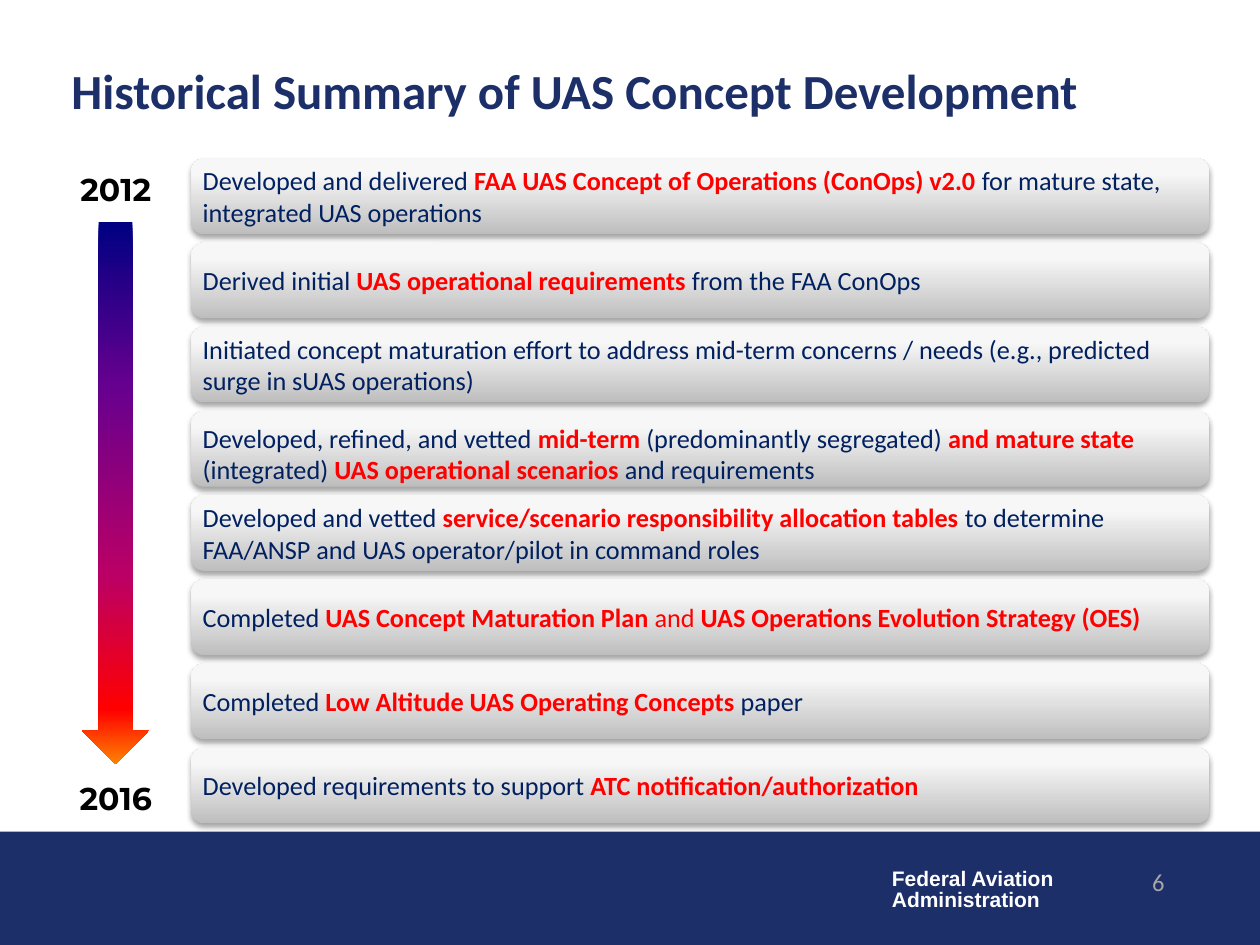
from typing import NamedTuple, Sequence

from lxml import etree
from pptx import Presentation
from pptx.dml.color import RGBColor
from pptx.enum.shapes import MSO_SHAPE as Shape
from pptx.enum.text import MSO_ANCHOR as Anchor, PP_ALIGN as Align
from pptx.oxml.ns import qn
from pptx.util import Pt

NAVY = RGBColor(0x1D, 0x2F, 0x68)
TEXT_BLUE = RGBColor(0x00, 0x20, 0x60)
RED = RGBColor(0xFF, 0x00, 0x00)
GRAY = RGBColor(0xA6, 0xA6, 0xA6)
WHITE = RGBColor(0xFF, 0xFF, 0xFF)
BLACK = RGBColor(0x00, 0x00, 0x00)

CARD_STOPS = [(0, RGBColor(0xBE, 0xBE, 0xBE)), (80, RGBColor(0xF7, 0xF7, 0xF7)),
              (100, RGBColor(0xF8, 0xF8, 0xF8))]
ARROW_STOPS = [(0, RGBColor(0x00, 0x00, 0x82)), (30, RGBColor(0x66, 0x00, 0x8F)),
               (65, RGBColor(0xBA, 0x00, 0x66)), (90, RED),
               (100, RGBColor(0xFF, 0x82, 0x00))]

CARD_LEFT, CARD_TOP, CARD_WIDTH, CARD_HEIGHT = 109.3, 90.5, 581.8, 43.3
CARD_PITCH = 48.1


class Span(NamedTuple):
    text: str
    color: RGBColor = TEXT_BLUE
    bold: bool = False


class Card(NamedTuple):
    spans: Sequence[Span]
    anchor: Anchor = Anchor.MIDDLE


class Label(NamedTuple):
    text: str
    left: float
    top: float
    width: float
    height: float
    size: float
    font: str
    color: RGBColor
    bold: bool = True
    align: Align = Align.LEFT
    anchor: Anchor = Anchor.TOP
    wrap: bool = True
    spacing: float = 1.0


def key(text: str) -> Span:
    """A highlighted phrase."""
    return Span(text, RED, True)


CARDS = [
    Card([Span("Developed and delivered "),
          key("FAA UAS Concept of Operations (ConOps) v2.0 "),
          Span("for mature state, integrated UAS operations")]),
    Card([Span("Derived initial "), key("UAS operational requirements "),
          Span("from the FAA ConOps")]),
    Card([Span("Initiated concept maturation effort to address mid-term concerns / needs "
               "(e.g., predicted surge in sUAS operations)")]),
    Card([Span("Developed, refined, and vetted "), key("mid-term "),
          Span("(predominantly segregated) "), key("and mature state "),
          Span("(integrated) "), key("UAS operational scenarios "),
          Span("and requirements")], Anchor.TOP),
    Card([Span("Developed and vetted "),
          key("service/scenario responsibility allocation tables "),
          Span("to determine FAA/ANSP and UAS operator/pilot in command roles")]),
    Card([Span("Completed "), key("UAS Concept Maturation Plan "), Span("and ", RED),
          key("UAS Operations Evolution Strategy (OES)")]),
    Card([Span("Completed "), key("Low Altitude UAS Operating Concepts "), Span("paper")]),
    Card([Span("Developed requirements to support "), key("ATC notification/authorization")]),
]

LABELS = [
    Label("Federal Aviation\nAdministration", 502.6, 493.2, 108, 31.7, 12, "Arial", WHITE,
          wrap=False, spacing=0.85),
    Label("Historical Summary of UAS Concept Development", 33.8, 27.4, 667.4, 48.2,
          28, "Calibri", NAVY, anchor=Anchor.MIDDLE),
    Label("6", 522.7, 491.8, 149.8, 36, 14, "Calibri", GRAY, bold=False, align=Align.RIGHT),
    Label("2012", 30.2, 93, 72, 30, 18, "Montserrat", BLACK, align=Align.CENTER,
          anchor=Anchor.MIDDLE),
    Label("2016", 30.2, 441, 72, 30, 18, "Montserrat", BLACK, align=Align.CENTER,
          anchor=Anchor.MIDDLE),
]


def add_label(s, label: Label) -> None:
    tf = s.shapes.add_textbox(Pt(label.left), Pt(label.top),
                              Pt(label.width), Pt(label.height)).text_frame
    tf.word_wrap = label.wrap
    tf.vertical_anchor = label.anchor
    tf.text = label.text
    for p in tf.paragraphs:
        p.alignment = label.align
        p.line_spacing = label.spacing
        for r in p.runs:
            r.font.name, r.font.size, r.font.bold = label.font, Pt(label.size), label.bold
            r.font.color.rgb = label.color


def add_shape(s, kind: Shape, left: float, top: float, width: float, height: float):
    """Add a preset shape with neither outline nor shadow."""
    sp = s.shapes.add_shape(kind, Pt(left), Pt(top), Pt(width), Pt(height))
    sp.shadow.inherit = False
    sp.line.fill.background()
    return sp


def set_gradient(sp, stops: Sequence[tuple[int, RGBColor]], angle: int) -> None:
    """Fill with a linear gradient; the angle runs clockwise from the left."""
    grad = etree.Element(qn("a:gradFill"), rotWithShape="1")
    stop_list = etree.SubElement(grad, qn("a:gsLst"))
    for percent, color in stops:
        stop = etree.SubElement(stop_list, qn("a:gs"), pos=str(percent * 1000))
        etree.SubElement(stop, qn("a:srgbClr"), val=str(color))
    etree.SubElement(grad, qn("a:lin"), ang=str(angle * 60000), scaled="0")
    sp._element.spPr.find(qn("a:prstGeom")).addnext(grad)


def add_drop_shadow(sp) -> None:
    effects = sp._element.spPr.find(qn("a:effectLst"))
    shadow = etree.SubElement(effects, qn("a:outerShdw"), blurRad=str(Pt(3.1)),
                              dist=str(Pt(1.8)), dir="5400000", rotWithShape="0")
    color = etree.SubElement(shadow, qn("a:srgbClr"), val=str(BLACK))
    etree.SubElement(color, qn("a:alpha"), val="35000")


def add_card(s, card: Card, top: float) -> None:
    sp = add_shape(s, Shape.ROUNDED_RECTANGLE, CARD_LEFT, top, CARD_WIDTH, CARD_HEIGHT)
    set_gradient(sp, CARD_STOPS, 270)
    add_drop_shadow(sp)
    tf = sp.text_frame
    tf.word_wrap = True
    tf.vertical_anchor = card.anchor
    tf.margin_left = tf.margin_right = tf.margin_top = tf.margin_bottom = Pt(4.4)
    p = tf.paragraphs[0]
    p.alignment = Align.LEFT
    for span in card.spans:
        r = p.add_run()
        r.text = span.text
        r.font.name, r.font.size, r.font.bold = "Calibri", Pt(15), span.bold
        r.font.color.rgb = span.color


def main() -> None:
    prs = Presentation()
    prs.slide_width, prs.slide_height = Pt(720), Pt(540)
    s = prs.slides.add_slide(prs.slide_layouts[6])

    footer = add_shape(s, Shape.RECTANGLE, 0, 475.2, 720, 64.8)
    footer.fill.solid()
    footer.fill.fore_color.rgb = NAVY

    for i, card in enumerate(CARDS):
        add_card(s, card, CARD_TOP + i * CARD_PITCH)
    for label in LABELS:
        add_label(s, label)

    timeline = add_shape(s, Shape.DOWN_ARROW, 46.8, 126.8, 38.4, 309.8)
    set_gradient(timeline, ARROW_STOPS, 90)
    prs.save("out.pptx")


if __name__ == "__main__":
    main()
